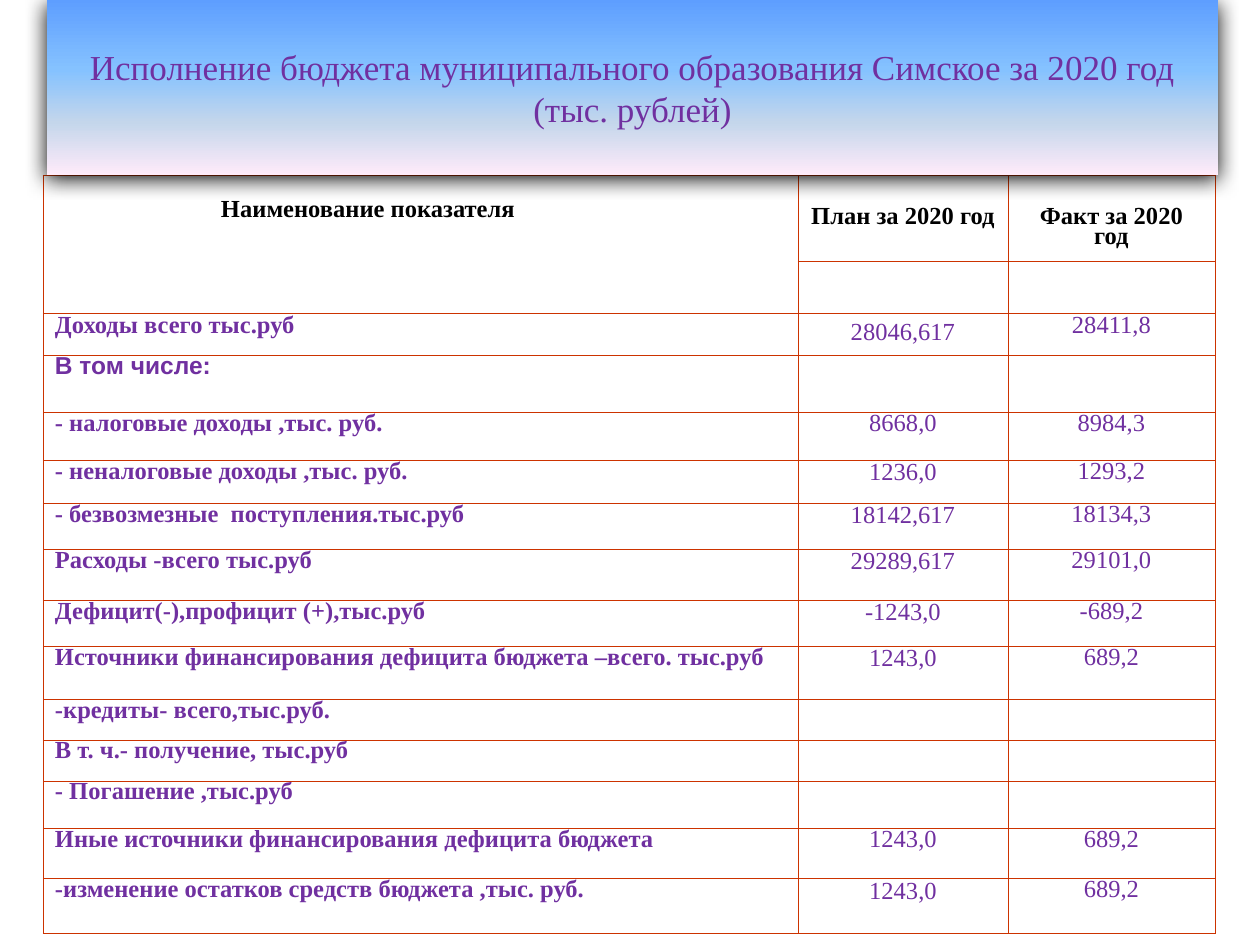
from lxml.etree import SubElement
from pptx import Presentation
from pptx.dml.color import RGBColor
from pptx.enum.shapes import MSO_SHAPE as SHAPE
from pptx.enum.text import MSO_ANCHOR as ANCHOR, PP_ALIGN as ALIGN
from pptx.oxml.ns import qn
from pptx.util import Pt

SCALE = 914400 / 126
C = {"white": "FFFFFF", "black": "000000", "purple": "7030A0", "border": "CC3300"}
SERIF, SANS = "Times New Roman", "Arial"
GRADIENT = [(0, "5E9EFF"), (40, "85C2FF"), (70, "C4D6EB"), (100, "FFEBFA")]

TITLE = "Исполнение бюджета муниципального образования Симское за 2020 год (тыс. рублей)"
COLS = [755, 210, 207]
HEADER_HEIGHTS = [86, 52]
# text, left margin, top margin
HEADERS = [
    ("Наименование показателя", 178, 26),
    ("План за 2020 год", 12, 33),
    ("Факт за 2020 год", 12, 33),
]
# height, indicator, plan, actual, line spacing of each column
ROWS = [
    (42, "Доходы всего тыс.руб", "28046,617", "28411,8", (0.74, 1.02, 0.74)),
    (57, "В том числе:", "", "", (0.66, 0.66, 0.66)),
    (48, "- налоговые доходы ,тыс. руб.", "8668,0", "8984,3", (0.66, 0.66, 0.66)),
    (43, "- неналоговые доходы ,тыс. руб.", "1236,0", "1293,2", (0.66, 0.74, 0.66)),
    (46, "- безвозмезные  поступления.тыс.руб", "18142,617", "18134,3", (0.66, 0.74, 0.66)),
    (51, "Расходы -всего тыс.руб", "29289,617", "29101,0", (0.66, 0.74, 0.66)),
    (46, "Дефицит(-),профицит (+),тыс.руб", "-1243,0", "-689,2", (0.66, 0.74, 0.66)),
    (53, "Источники финансирования дефицита бюджета –всего. тыс.руб", "1243,0", "689,2",
     (0.66, 0.74, 0.66)),
    (39, "-кредиты- всего,тыс.руб.", "", "", (0.66, 0.66, 0.66)),
    (41, "В т. ч.- получение, тыс.руб", "", "", (0.66, 0.66, 0.66)),
    (48, "- Погашение ,тыс.руб", "", "", (0.66, 0.66, 0.66)),
    (50, "Иные источники финансирования дефицита бюджета", "1243,0", "689,2", (0.66, 0.66, 0.66)),
    (55, "-изменение остатков средств бюджета ,тыс. руб.", "1243,0", "689,2", (0.66, 0.74, 0.66)),
]


def px(n):
    return int(n * SCALE)


def rgb(name):
    return RGBColor.from_string(C[name])


def put_text(tf, text, size=14, font=SERIF, color="purple", bold=False,
             align=ALIGN.LEFT, spacing=None):
    p = tf.paragraphs[0]
    p.alignment = align
    p.line_spacing = spacing
    if not text:
        # An empty cell must not force its row to the default text height.
        SubElement(p._p, qn("a:endParaRPr"), sz=str(size * 100))
        return
    r = p.add_run()
    r.text = text
    f = r.font
    f.size, f.name, f.bold = Pt(size), font, bold
    f.color.rgb = rgb(color)


def add_borders(cell):
    tc_pr = cell._tc.get_or_add_tcPr()
    for i, side in enumerate(("lnL", "lnR", "lnT", "lnB")):
        ln = tc_pr.makeelement(qn(f"a:{side}"), {"w": str(Pt(0.06))})
        fill = SubElement(ln, qn("a:solidFill"))
        SubElement(fill, qn("a:srgbClr"), val=C["border"])
        tc_pr.insert(i, ln)


def fill_cell(cell, text, left=12, top=5, **fmt):
    cell.margin_left, cell.margin_top = px(left), px(top)
    cell.margin_right, cell.margin_bottom = px(12), px(6)
    put_text(cell.text_frame, text, **fmt)


def add_budget_table(slide):
    heights = HEADER_HEIGHTS + [row[0] for row in ROWS]
    table = slide.shapes.add_table(len(heights), len(COLS), px(43), px(175),
                                   px(sum(COLS)), px(sum(heights))).table
    table.first_row = table.horz_banding = False
    for col, width in zip(table.columns, COLS):
        col.width = px(width)
    for row, height in zip(table.rows, heights):
        row.height = px(height)
    for cell in table.iter_cells():
        cell.fill.solid()
        cell.fill.fore_color.rgb = rgb("white")
        add_borders(cell)

    for j, (text, left, top) in enumerate(HEADERS):
        align = ALIGN.CENTER if j else ALIGN.LEFT
        fill_cell(table.cell(0, j), text, left, top, color="black", bold=True,
                  align=align, spacing=0.74)
        fill_cell(table.cell(1, j), "")
    table.cell(0, 0).merge(table.cell(1, 0))

    for i, (_, name, plan, actual, spacings) in enumerate(ROWS, len(HEADER_HEIGHTS)):
        font = SANS if name == "В том числе:" else SERIF
        fill_cell(table.cell(i, 0), name, font=font, bold=True, spacing=spacings[0])
        for j, value in enumerate((plan, actual), 1):
            fill_cell(table.cell(i, j), value, align=ALIGN.CENTER, spacing=spacings[j])


def set_gradient(s, stops):
    s.fill.gradient()
    s.fill.gradient_angle = 270
    gs_lst = s._element.spPr.find(f".//{qn('a:gsLst')}")
    gs_lst.clear()
    for pos, color in stops:
        gs = SubElement(gs_lst, qn("a:gs"), pos=str(pos * 1000))
        SubElement(gs, qn("a:srgbClr"), val=color)


def set_shadow(s, blur, dist, alpha):
    """Cast a black shadow straight down."""
    s.shadow.inherit = False
    effects = s._element.spPr.find(qn("a:effectLst"))
    shadow = SubElement(effects, qn("a:outerShdw"), blurRad=str(Pt(blur)),
                        dist=str(Pt(dist)), dir="5400000", rotWithShape="0")
    color = SubElement(shadow, qn("a:srgbClr"), val=C["black"])
    SubElement(color, qn("a:alpha"), val=str(alpha * 1000))


def add_title_banner(slide):
    s = slide.shapes.add_shape(SHAPE.RECTANGLE, px(47), 0, px(1171), px(175))
    set_gradient(s, GRADIENT)
    s.line.fill.background()
    set_shadow(s, blur=12, dist=2, alpha=93)
    s.text_frame.word_wrap = True
    s.text_frame.vertical_anchor = ANCHOR.MIDDLE
    put_text(s.text_frame, TITLE, size=20, align=ALIGN.CENTER)


def main():
    prs = Presentation()
    prs.slide_width, prs.slide_height = px(1260), px(945)
    slide = prs.slides.add_slide(prs.slide_layouts[6])
    add_budget_table(slide)
    add_title_banner(slide)
    prs.save("out.pptx")


if __name__ == "__main__":
    main()
